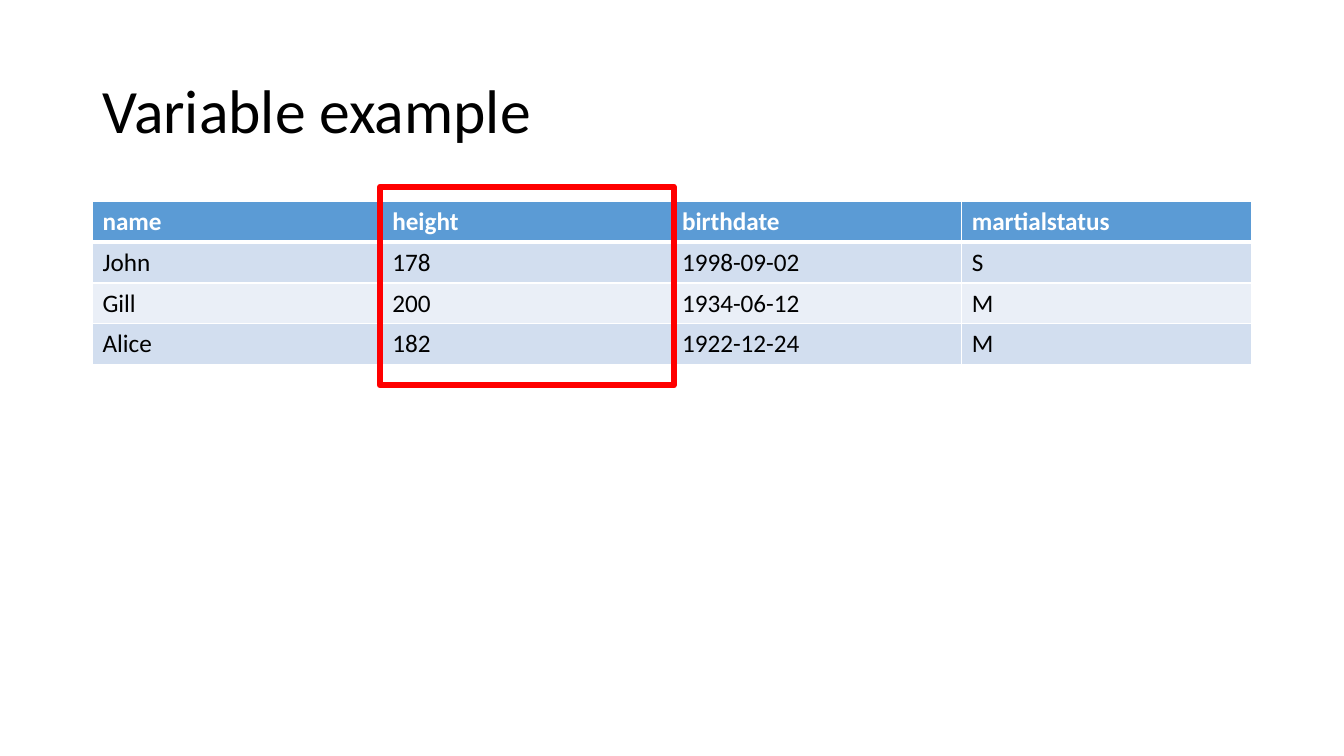
"""Build the slide that explains a variable as one column of a data table."""
from lxml import etree
from pptx import Presentation
from pptx.dml.color import RGBColor as Rgb
from pptx.enum.shapes import MSO_SHAPE as Shape
from pptx.enum.text import MSO_ANCHOR as Anchor, MSO_AUTO_SIZE as AutoSize, PP_ALIGN as Align
from pptx.oxml.ns import qn
from pptx.util import Cm, Pt

COLOURS = {
    "text": "000000",
    "grid": "FFFFFF",
    "header": "5B9BD5",
    "odd": "D2DEEF",
    "even": "EAEFF7",
    "highlight": "FF0000",
}
FONT = "Calibri"
PEOPLE = [
    ("name", "height", "birthdate", "martialstatus"),
    ("John", "178", "1998-09-02", "S"),
    ("Gill", "200", "1934-06-12", "M"),
    ("Alice", "182", "1922-12-24", "M"),
]


def style_font(paragraph, size, colour, bold=False):
    font = paragraph.font
    font.name, font.size, font.bold = FONT, Pt(size), bold
    font.color.rgb = Rgb.from_string(COLOURS[colour])


def add_border(cell, position, side, width):
    line = etree.Element(qn(f"a:ln{side}"), w=str(Pt(width)))
    fill = etree.SubElement(line, qn("a:solidFill"))
    etree.SubElement(fill, qn("a:srgbClr"), val=COLOURS["grid"])
    cell._tc.get_or_add_tcPr().insert(position, line)


deck = Presentation()
deck.slide_width, deck.slide_height = Cm(33.87), Cm(19.05)
slide = deck.slides.add_slide(deck.slide_layouts[5])

title = slide.shapes.title
title.left, title.top, title.width, title.height = Cm(2.33), Cm(1.01), Cm(29.21), Cm(3.68)
title.text_frame.text = "Variable example"
title.text_frame.auto_size = AutoSize.NONE
title.text_frame.vertical_anchor = Anchor.MIDDLE
heading = title.text_frame.paragraphs[0]
heading.alignment = Align.LEFT
heading.line_spacing = 0.9
style_font(heading, 44, "text")

people_table = slide.shapes.add_table(
    len(PEOPLE), len(PEOPLE[0]), Cm(2.33), Cm(5.07), Cm(29.21), Cm(4.12)
).table
for row, person in enumerate(PEOPLE):
    is_header = row == 0
    band = "header" if is_header else "odd" if row % 2 else "even"
    for column, value in enumerate(person):
        cell = people_table.cell(row, column)
        cell.text = value
        style_font(cell.text_frame.paragraphs[0], 18, "grid" if is_header else "text", is_header)
        cell.fill.solid()
        cell.fill.fore_color.rgb = Rgb.from_string(COLOURS[band])
        for position, side in enumerate("LRTB"):
            thick = (row, side) in ((0, "B"), (1, "T"))
            add_border(cell, position, side, 3 if thick else 1)

height_frame = slide.shapes.add_shape(Shape.RECTANGLE, Cm(9.58), Cm(4.71), Cm(7.4), Cm(5))
height_frame.shadow.inherit = False
height_frame.fill.background()
height_frame.line.color.rgb = Rgb.from_string(COLOURS["highlight"])
height_frame.line.width = Pt(4.5)

deck.save("out.pptx")
